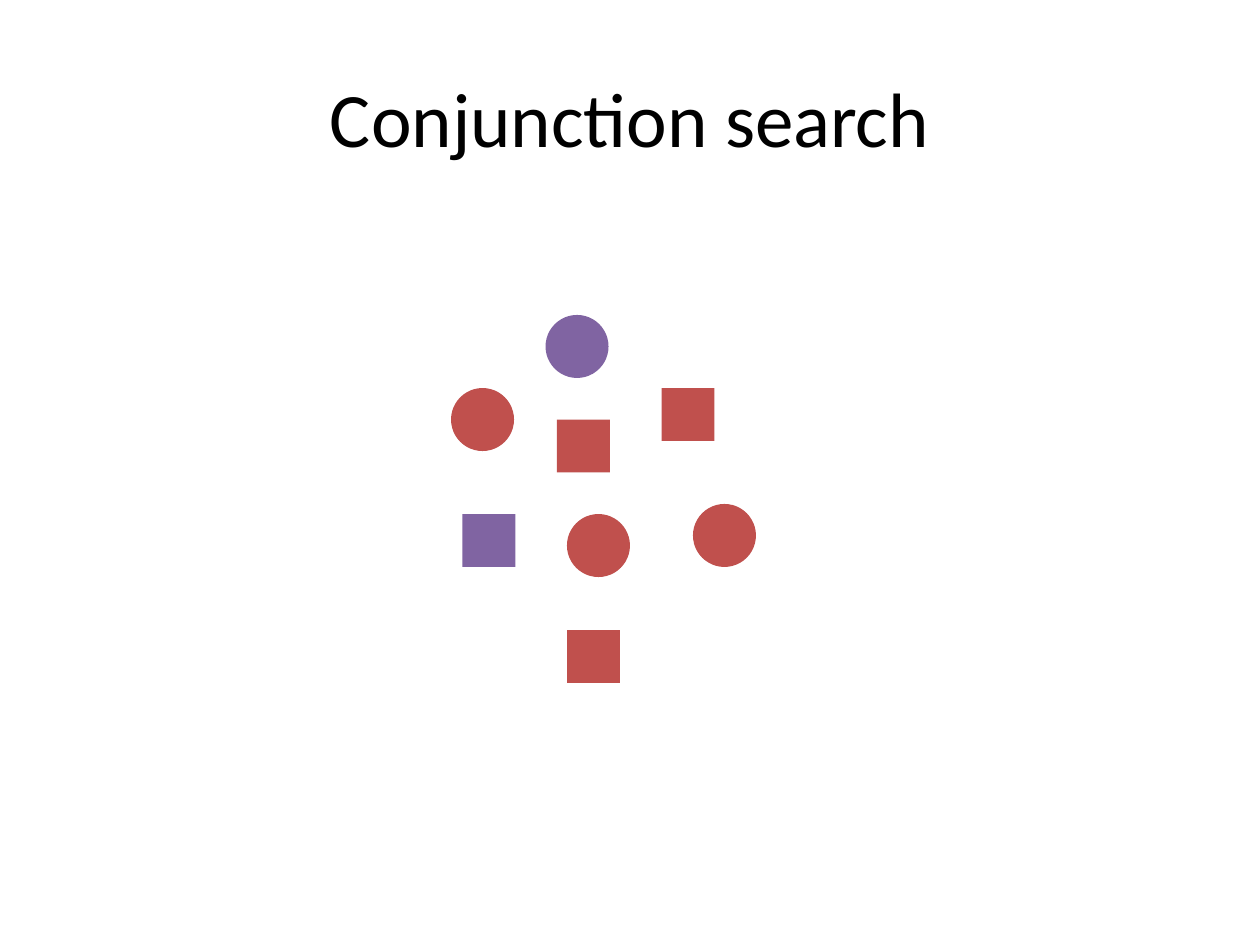
from pptx import Presentation
from pptx.dml.color import RGBColor
from pptx.enum.shapes import MSO_SHAPE
from pptx.enum.text import MSO_ANCHOR, PP_ALIGN
from pptx.util import Inches, Pt

COLORS = {"text": "000000", "purple": "8064A2", "red": "C0504D"}

presentation = Presentation()
presentation.slide_width = Inches(10)
presentation.slide_height = Inches(7.5)
slide = presentation.slides.add_slide(presentation.slide_layouts[5])

title = slide.shapes.title
title.left, title.top = Inches(0.5), Inches(0.3)
title.width, title.height = Inches(9), Inches(1.25)
title.text_frame.vertical_anchor = MSO_ANCHOR.MIDDLE
paragraph = title.text_frame.paragraphs[0]
paragraph.alignment = PP_ALIGN.CENTER
run = paragraph.add_run()
run.text = "Conjunction search"
run.font.name = "Calibri"
run.font.size = Pt(44)
run.font.color.rgb = RGBColor.from_string(COLORS["text"])

circles = [
    (4.33, 2.5, "purple"),
    (4.5, 4.08, "red"),
    (3.58, 3.08, "red"),
    (5.5, 4, "red"),
]
squares = [
    (5.25, 3.08, "red"),
    (4.5, 5, "red"),
    (3.67, 4.08, "purple"),
    (4.42, 3.33, "red"),
]

for kind, size, items in [
    (MSO_SHAPE.OVAL, 0.5, circles),
    (MSO_SHAPE.RECTANGLE, 0.42, squares),
]:
    for left, top, color in items:
        shape = slide.shapes.add_shape(
            kind, Inches(left), Inches(top), Inches(size), Inches(size)
        )
        shape.shadow.inherit = False
        shape.fill.solid()
        shape.fill.fore_color.rgb = RGBColor.from_string(COLORS[color])
        shape.line.fill.background()

presentation.save("out.pptx")
